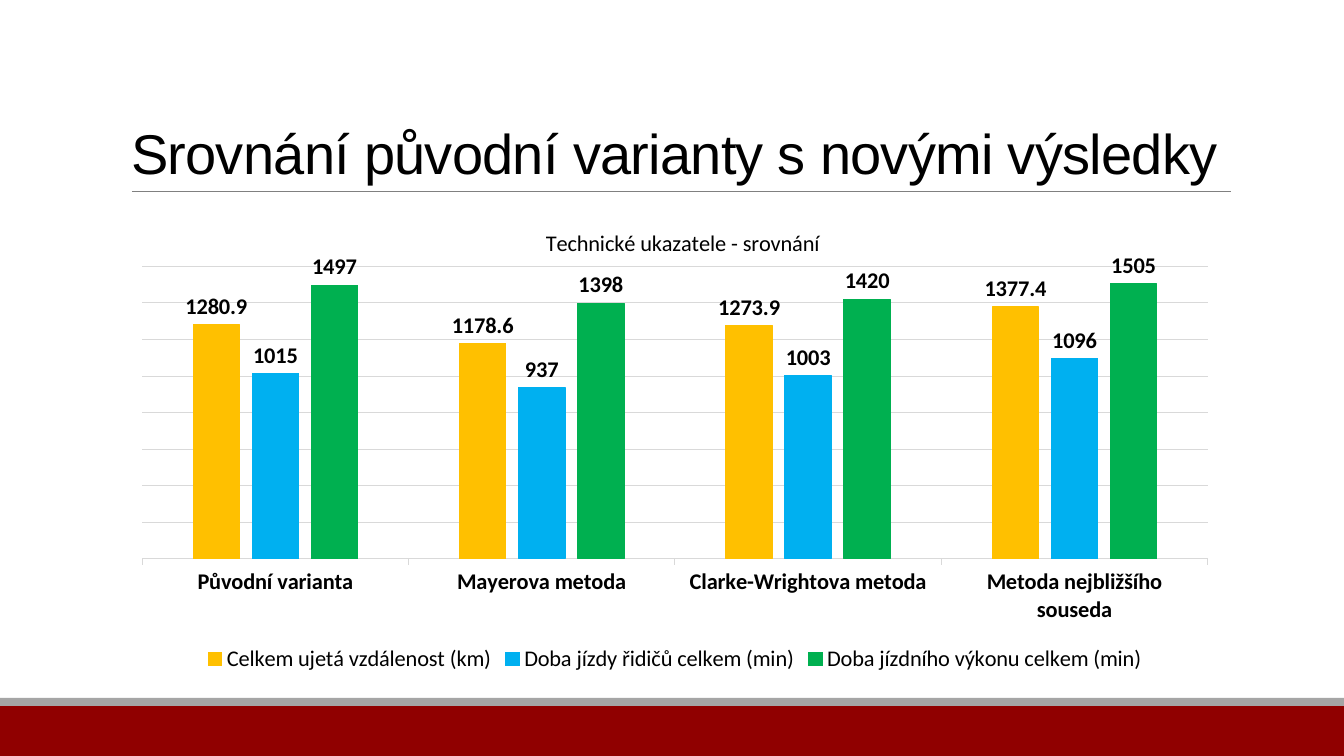
"""Build a slide comparing the original routes with three routing methods."""
from lxml import etree
from pptx import Presentation
from pptx import util as u
from pptx.chart.data import CategoryChartData
from pptx.dml.color import RGBColor
from pptx.enum import chart as ch, shapes, text
from pptx.oxml.ns import qn

PX = 914400 / 100.8
COLORS = {"red": "900000", "band": "A5A5A5", "rule": "808080", "grid": "D9D9D9",
          "text": "000000", "yellow": "FFC000", "blue": "00B0F0", "green": "00B050"}
CATEGORIES = ["Původní varianta", "Mayerova metoda", "Clarke-Wrightova metoda",
              "Metoda nejbližšího souseda"]
SERIES = [("Celkem ujetá vzdálenost (km)", "yellow", [1280.9, 1178.6, 1273.9, 1377.4]),
          ("Doba jízdy řidičů celkem (min)", "blue", [1015, 937, 1003, 1096]),
          ("Doba jízdního výkonu celkem (min)", "green", [1497, 1398, 1420, 1505])]


def style(font, size, name="Calibri", bold=False):
    font.size, font.name, font.bold = u.Pt(size), name, bold
    font.color.rgb = RGBColor.from_string(COLORS["text"])


def place(parent, index, **settings):
    for old in parent.findall(qn("c:layout")):
        parent.remove(old)
    layout = etree.Element(qn("c:layout"))
    manual = etree.SubElement(layout, qn("c:manualLayout"))
    for tag, val in settings.items():
        etree.SubElement(manual, qn("c:" + tag)).set("val", str(val))
    parent.insert(index, layout)


prs = Presentation()
prs.slide_width, prs.slide_height = int(1344 * PX), int(756 * PX)
s = prs.slides.add_slide(prs.slide_layouts[5])

for top, height, color in [(706, 50, "red"), (698, 8, "band")]:
    sp = s.shapes.add_shape(shapes.MSO_SHAPE.RECTANGLE, 0, int(top * PX),
                            prs.slide_width, int(height * PX))
    sp.shadow.inherit = False
    sp.fill.solid()
    sp.fill.fore_color.rgb = RGBColor.from_string(COLORS[color])
    sp.line.fill.background()

rule = s.shapes.add_connector(shapes.MSO_CONNECTOR.STRAIGHT, int(132 * PX), int(191 * PX),
                              int(1231 * PX), int(191 * PX))
rule.line.color.rgb = RGBColor.from_string(COLORS["rule"])
rule.line.width = u.Pt(0.5)
etree.SubElement(rule.element.spPr, qn("a:effectLst"))

title = s.shapes.title
title.left, title.top, title.width, title.height = [int(v * PX) for v in (121, 31, 1109, 160)]
tf = title.text_frame
tf.word_wrap = True
tf.auto_size = text.MSO_AUTO_SIZE.NONE
tf.vertical_anchor = text.MSO_ANCHOR.BOTTOM
p = tf.paragraphs[0]
p.alignment = text.PP_ALIGN.LEFT
p.line_spacing = 0.85
r = p.add_run()
r.text = "Srovnání původní varianty s novými výsledky"
style(p.font, 40, "Arial")
r.font.language_id = None
r.font.size = u.Pt(40)
r.font._element.set("spc", "-50")

data = CategoryChartData()
data.categories = CATEGORIES
for name, color, values in SERIES:
    data.add_series(name, values)
chart = s.shapes.add_chart(ch.XL_CHART_TYPE.COLUMN_CLUSTERED, int(120 * PX), int(205 * PX),
                           int(1110 * PX), int(472 * PX), data).chart
style(chart.font, 10)

chart.has_title = True
p = chart.chart_title.text_frame.paragraphs[0]
p.text = "Technické ukazatele - srovnání"
style(p.font, 16)
chart.chart_title.include_in_layout = False
place(chart.chart_title._element, 1, xMode="edge", yMode="edge", x=0.38, y=0.04)

chart.has_legend = True
chart.legend.position = ch.XL_LEGEND_POSITION.BOTTOM
chart.legend.include_in_layout = False
style(chart.legend.font, 16)

cat = chart.category_axis
style(cat.tick_labels.font, 16, bold=True)
cat.major_tick_mark = ch.XL_TICK_MARK.OUTSIDE
val = chart.value_axis
val.visible = False
val.minimum_scale, val.maximum_scale, val.major_unit = 0, 1600, 200
for line in (cat.format.line, val.major_gridlines.format.line):
    line.color.rgb = RGBColor.from_string(COLORS["grid"])
    line.width = u.Pt(0.75)

plot = chart.plots[0]
plot.gap_width, plot.overlap, plot.vary_by_categories = 219, -27, False
for series, (name, color, values) in zip(plot.series, SERIES):
    rgb = RGBColor.from_string(COLORS[color])
    series.format.fill.solid()
    series.format.fill.fore_color.rgb = rgb
    series.format.line.color.rgb = rgb
    series.format.line.width = u.Pt(0.75)
    labels = series.data_labels
    labels.show_value = True
    labels.position = ch.XL_LABEL_POSITION.OUTSIDE_END
    style(labels.font, 16, bold=True)
place(chart._chartSpace.chart.plotArea, 0, layoutTarget="inner", xMode="edge", yMode="edge",
      x=0.02, y=0.13, w=0.96, h=0.62)

prs.save("out.pptx")
